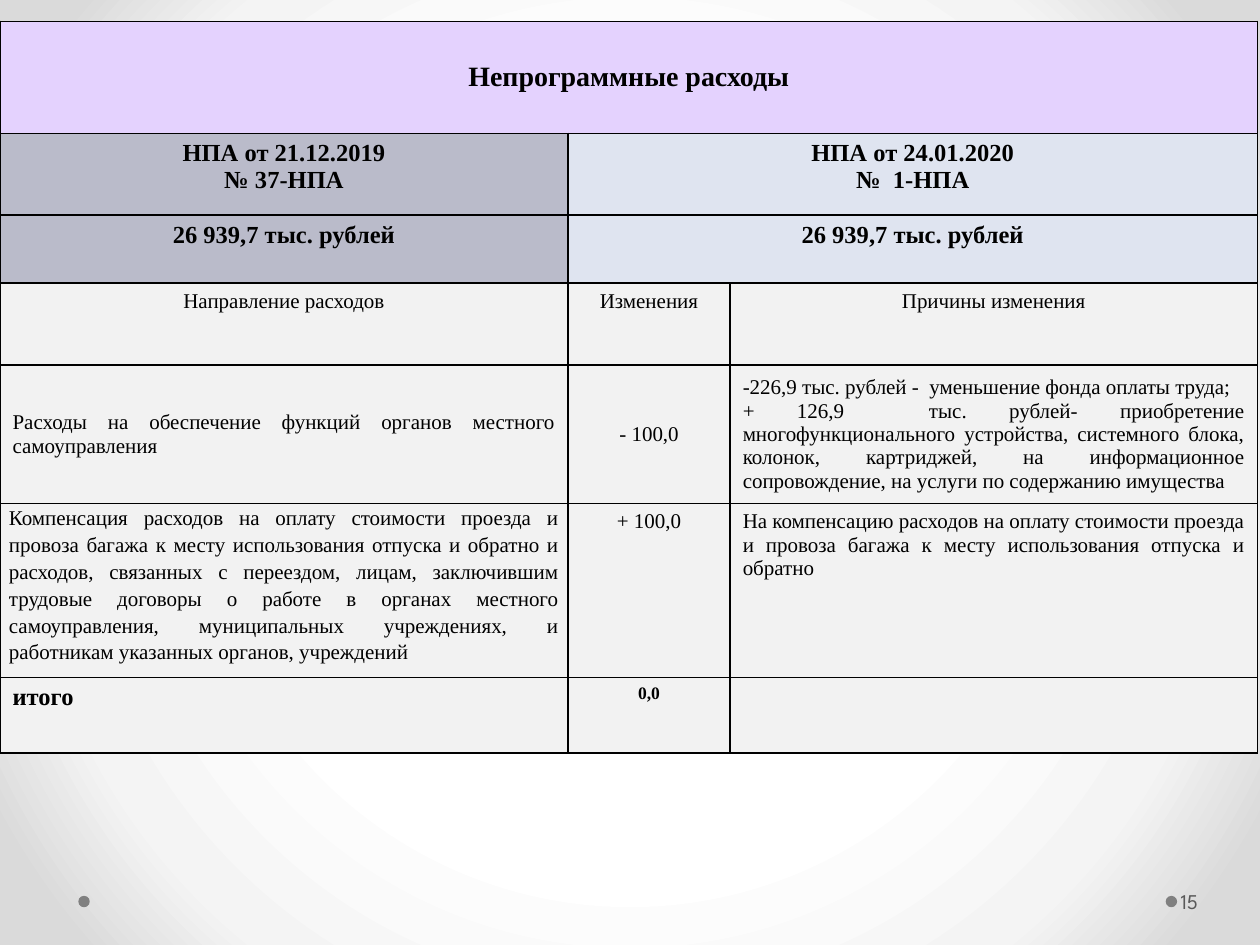
from dataclasses import dataclass, field

from lxml.etree import SubElement
from pptx import Presentation
from pptx.dml.color import RGBColor
from pptx.enum.shapes import MSO_SHAPE as Preset
from pptx.enum.text import MSO_ANCHOR as Anchor, PP_ALIGN as Align
from pptx.oxml import parse_xml
from pptx.oxml.ns import nsdecls, qn
from pptx.slide import Slide
from pptx.table import Table, _Cell as TableCell
from pptx.util import Cm, Length, Pt


@dataclass(frozen=True)
class Theme:
    table_font: str = "Times New Roman"
    number_font: str = "League Spartan"
    text: str = "000000"
    number: str = "595959"
    dot: str = "808080"
    title_fill: str = "E4D2FE"
    old_fill: str = "BABBCA"
    new_fill: str = "DFE4F0"
    body_fill: str = "F2F2F2"
    title_size: int = 16
    heading_size: int = 14
    body_size: int = 12
    total_size: int = 10
    border_width: Length = Pt(1)
    backdrop: tuple = ((50, "FFFFFF"), (76, "F4F4F4"), (92, "DADADA"))


THEME = Theme()


@dataclass(frozen=True)
class Entry:
    row: int
    column: int
    lines: list[str] = field(default_factory=list)
    fill: str = THEME.body_fill
    size: int = THEME.body_size
    bold: bool = False
    align: Align = Align.CENTER
    anchor: Anchor = Anchor.TOP
    last_column: int | None = None
    line_spacing: float | None = None
    margins: tuple[Length, Length] | None = None


COLUMN_WIDTHS = (11.45, 3.27, 10.63)
ROW_HEIGHTS = (2.26, 1.65, 1.37, 1.65, 2.6, 3.25, 1.52)
HEADING = {"size": THEME.heading_size, "bold": True}
OLD = {**HEADING, "fill": THEME.old_fill}
NEW = {**HEADING, "fill": THEME.new_fill, "last_column": 2}
AMOUNT = "26 939,7 тыс. рублей"

ENTRIES = [
    Entry(0, 0, ["Непрограммные расходы"], THEME.title_fill, THEME.title_size, True,
          anchor=Anchor.MIDDLE, last_column=2),
    Entry(1, 0, ["НПА от 21.12.2019", "№ 37-НПА"], **OLD),
    Entry(1, 1, ["НПА от 24.01.2020", "№  1-НПА"], **NEW),
    Entry(2, 0, [AMOUNT], **OLD),
    Entry(2, 1, [AMOUNT], **NEW),
    Entry(3, 0, ["Направление расходов"]),
    Entry(3, 1, ["Изменения"]),
    Entry(3, 2, ["Причины изменения"]),
    Entry(4, 0, ["Расходы на обеспечение функций органов местного самоуправления"],
          align=Align.JUSTIFY, anchor=Anchor.MIDDLE),
    Entry(4, 1, ["- 100,0"], anchor=Anchor.MIDDLE),
    Entry(4, 2, ["-226,9 тыс. рублей -  уменьшение фонда оплаты труда;",
                 "+ 126,9  тыс. рублей- приобретение многофункционального устройства, "
                 "системного блока, колонок, картриджей, на информационное сопровождение, "
                 "на услуги по содержанию имущества"],
          align=Align.JUSTIFY, anchor=Anchor.MIDDLE),
    Entry(5, 0, ["Компенсация расходов на оплату стоимости проезда и провоза багажа к месту "
                 "использования отпуска и обратно и расходов, связанных с переездом, лицам, "
                 "заключившим трудовые договоры о работе в органах местного самоуправления, "
                 "муниципальных учреждениях, и работникам указанных органов, учреждений"],
          align=Align.JUSTIFY, line_spacing=1.15, margins=(Cm(0.18), Cm(0))),
    Entry(5, 1, ["+ 100,0"]),
    Entry(5, 2, ["На компенсацию расходов на оплату стоимости проезда и провоза багажа "
                 "к месту использования отпуска и обратно"], align=Align.JUSTIFY),
    Entry(6, 0, ["итого"], align=Align.JUSTIFY, **HEADING),
    Entry(6, 1, ["0,0"], size=THEME.total_size, bold=True),
    Entry(6, 2),
]


def paint_background(page: Slide) -> None:
    page.background.fill.gradient()
    gradient = page.element.find(".//" + qn("a:gradFill"))
    stops = "".join(
        f'<a:gs pos="{position * 1000}"><a:srgbClr val="{color}"/></a:gs>'
        for position, color in THEME.backdrop
    )
    radial = parse_xml(
        f'<a:gradFill {nsdecls("a")} rotWithShape="1"><a:gsLst>{stops}</a:gsLst>'
        '<a:path path="circle"><a:fillToRect l="50000" t="50000" r="50000" b="50000"/>'
        "</a:path></a:gradFill>"
    )
    gradient.getparent().replace(gradient, radial)


def add_dot(page: Slide, left: Length) -> None:
    dot = page.shapes.add_shape(Preset.OVAL, left, Cm(18.06), Cm(0.23), Cm(0.23))
    dot.shadow.inherit = False
    dot.fill.solid()
    dot.fill.fore_color.rgb = RGBColor.from_string(THEME.dot)
    dot.line.fill.background()


def add_page_number(page: Slide, number: str) -> None:
    box = page.shapes.add_textbox(Cm(23.72), Cm(17.65), Cm(1.55), Cm(1.02))
    frame = box.text_frame
    frame.word_wrap = True
    frame.vertical_anchor = Anchor.MIDDLE
    frame.margin_left = Cm(0.08)
    frame.margin_right = Cm(0.13)
    para = frame.paragraphs[0]
    para.text = number
    para.font.name = THEME.number_font
    para.font.size = Pt(THEME.body_size)
    para.font.color.rgb = RGBColor.from_string(THEME.number)


def add_borders(cell: TableCell) -> None:
    properties = cell._tc.get_or_add_tcPr()
    for index, side in enumerate(("lnL", "lnR", "lnT", "lnB")):
        line = SubElement(properties, qn(f"a:{side}"), w=str(THEME.border_width))
        color = SubElement(SubElement(line, qn("a:solidFill")), qn("a:srgbClr"))
        color.set("val", THEME.text)
        properties.insert(index, line)


def fill_entry(table: Table, entry: Entry) -> None:
    cell = table.cell(entry.row, entry.column)
    if entry.last_column is not None:
        cell.merge(table.cell(entry.row, entry.last_column))
    cell.fill.solid()
    cell.fill.fore_color.rgb = RGBColor.from_string(entry.fill)
    cell.vertical_anchor = entry.anchor
    if entry.margins:
        cell.margin_left = cell.margin_right = entry.margins[0]
        cell.margin_top = cell.margin_bottom = entry.margins[1]
    cell.text_frame.text = "\n".join(entry.lines)
    for para in cell.text_frame.paragraphs:
        para.alignment = entry.align
        if entry.line_spacing:
            para.line_spacing = entry.line_spacing
        para.font.name = THEME.table_font
        para.font.size = Pt(entry.size)
        para.font.bold = entry.bold
        para.font.color.rgb = RGBColor.from_string(THEME.text)


def add_expense_table(page: Slide) -> None:
    table = page.shapes.add_table(
        len(ROW_HEIGHTS), len(COLUMN_WIDTHS), Cm(0), Cm(0.43),
        Cm(sum(COLUMN_WIDTHS)), Cm(sum(ROW_HEIGHTS)),
    ).table
    table.first_row = table.horz_banding = False
    for column, width in zip(table.columns, COLUMN_WIDTHS):
        column.width = Cm(width)
    for row, height in zip(table.rows, ROW_HEIGHTS):
        row.height = Cm(height)
    for entry in ENTRIES:
        fill_entry(table, entry)
    for cell in table.iter_cells():
        add_borders(cell)


def main() -> None:
    deck = Presentation()
    deck.slide_width, deck.slide_height = Cm(25.4), Cm(19.05)
    page = deck.slides.add_slide(deck.slide_layouts[6])
    paint_background(page)
    for left in (Cm(23.5), Cm(1.58)):
        add_dot(page, left)
    add_page_number(page, "15")
    add_expense_table(page)
    deck.save("out.pptx")


if __name__ == "__main__":
    main()
